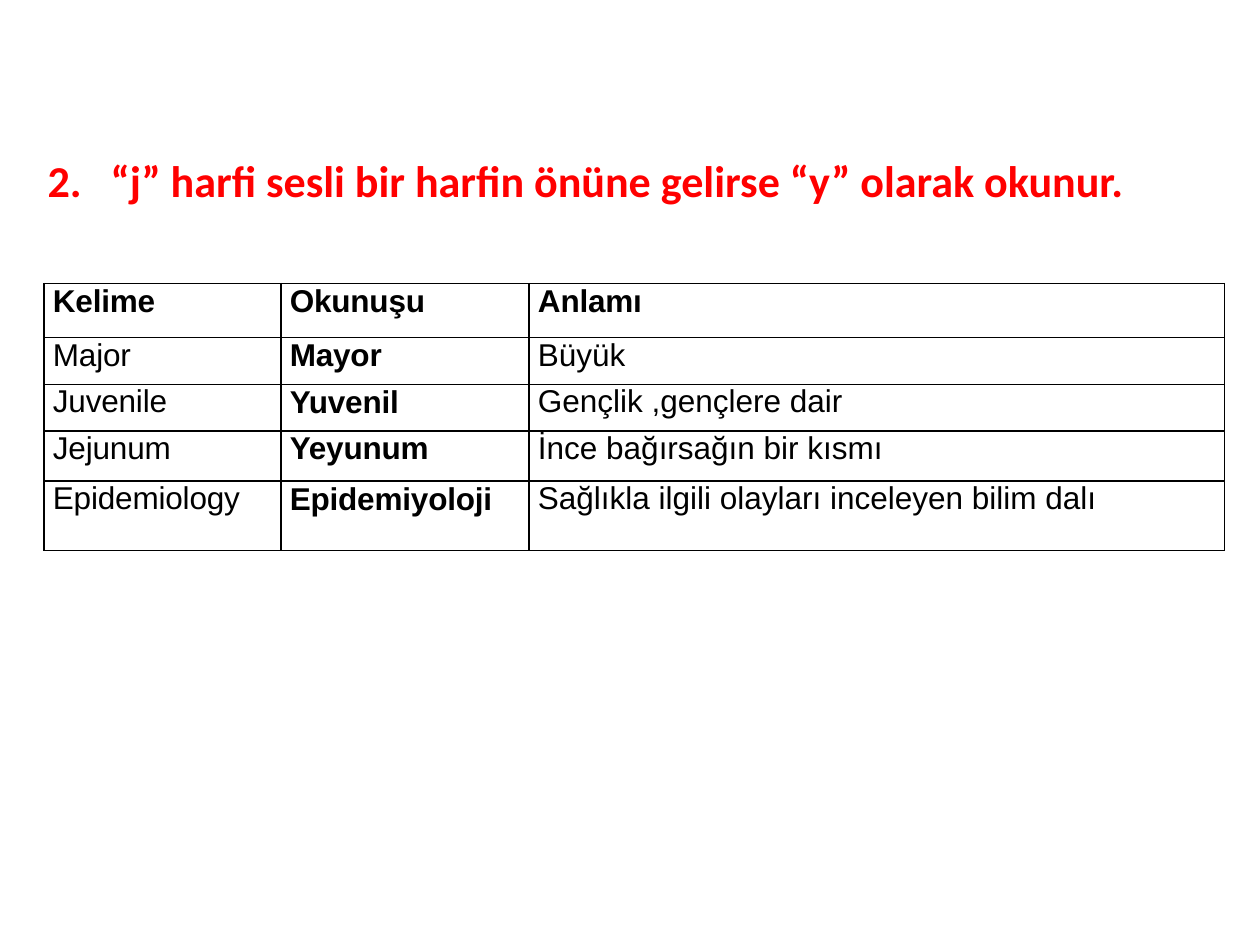
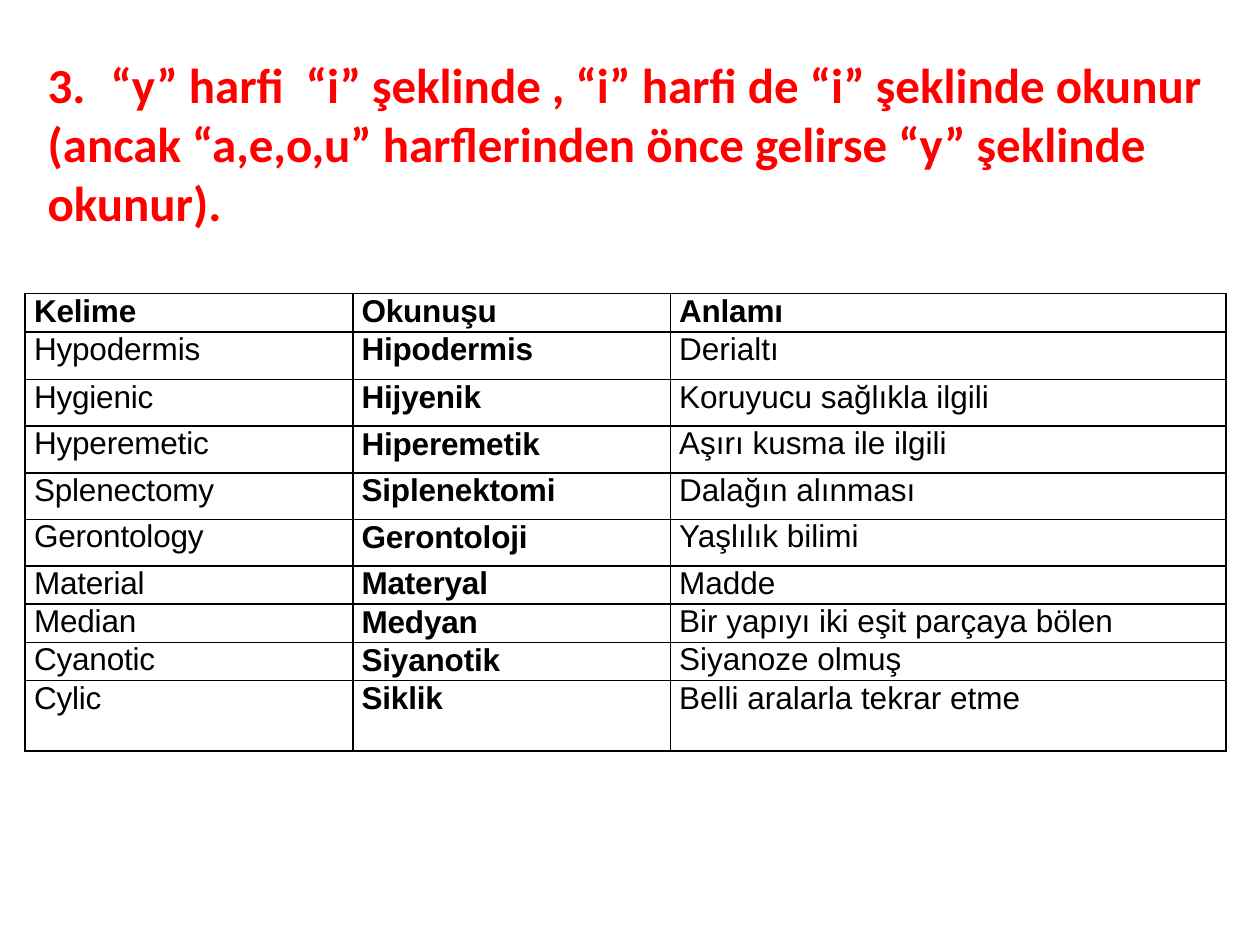
"""Builds two slides on how Latin medical terms are read, each a red rule over a word table."""
from lxml.etree import SubElement as Sub
from pptx import Presentation
from pptx.dml.color import RGBColor as RGB
from pptx.enum.text import MSO_ANCHOR as Anchor
from pptx.oxml.ns import qn
from pptx.util import Inches as In, Pt

RED, BLACK = "FF0000", "000000"
HEAD = ("Kelime", "Okunuşu", "Anlamı")
PAD = 0.07

RULES = [
    dict(
        text="2.\t“j” harfi sesli bir harfin önüne gelirse “y” olarak okunur.",
        size=25.2, box=(0.28, 0.92, 9.45, 1.02), foot=0,
        at=(0.35, 2.25), cols=(1.88, 1.97, 5.52),
        rows=(0.43, 0.37, 0.37, 0.4, 0.55),
        words=[
            ("Major", "Mayor", "Büyük"),
            ("Juvenile", "Yuvenil", "Gençlik ,gençlere dair"),
            ("Jejunum", "Yeyunum", "İnce bağırsağın bir kısmı"),
            ("Epidemiology", "Epidemiyoloji",
             "Sağlıkla ilgili olayları inceleyen bilim dalı"),
        ],
    ),
    dict(
        text="3.\t“y” harfi  “i” şeklinde , “i” harfi de “i” şeklinde okunur "
             "(ancak “a,e,o,u” harflerinden önce gelirse “y” şeklinde okunur).",
        size=28, box=(0.28, 0.44, 9.37, 1.81), foot=0.42,
        at=(0.2, 2.33), cols=(2.6, 2.52, 4.41),
        rows=(0.28, 0.38, *[0.37] * 4, 0.28, 0.3, 0.28, 0.56),
        words=[
            ("Hypodermis", "Hipodermis", "Derialtı"),
            ("Hygienic", "Hijyenik", "Koruyucu sağlıkla ilgili"),
            ("Hyperemetic", "Hiperemetik", "Aşırı kusma ile ilgili"),
            ("Splenectomy", "Siplenektomi", "Dalağın alınması"),
            ("Gerontology", "Gerontoloji", "Yaşlılık bilimi"),
            ("Material", "Materyal", "Madde"),
            ("Median", "Medyan", "Bir yapıyı iki eşit parçaya bölen"),
            ("Cyanotic", "Siyanotik", "Siyanoze olmuş"),
            ("Cylic", "Siklik", "Belli aralarla tekrar etme"),
        ],
    ),
]


def write(frame, text, font="Arial", size=18, color=BLACK, bold=False, space=0, line=1.0):
    par = frame.paragraphs[0]
    par.line_spacing = line
    run = par.add_run()
    run.text = text
    run.font.name, run.font.size, run.font.bold = font, Pt(size), bold
    run.font.color.rgb = RGB.from_string(color)
    run.font._element.set("spc", str(space))
    return par._p.get_or_add_pPr()


def edge(cell, color=BLACK, width=1):
    props = cell._tc.get_or_add_tcPr()
    for side in ("lnL", "lnR", "lnT", "lnB"):
        rim = Sub(props, qn(f"a:{side}"), w=str(Pt(width)))
        Sub(Sub(rim, qn("a:solidFill")), qn("a:srgbClr"), val=color)
    cell.fill.background()


deck = Presentation()
deck.slide_width, deck.slide_height = In(10), In(7.5)

for rule in RULES:
    slide = deck.slides.add_slide(deck.slide_layouts[6])

    frame = slide.shapes.add_textbox(*map(In, rule["box"])).text_frame
    frame.word_wrap = True
    frame.vertical_anchor = Anchor.MIDDLE
    frame.margin_top = frame.margin_right = 0
    frame.margin_bottom = In(rule["foot"])
    props = write(frame, rule["text"], font="Calibri", size=rule["size"], color=RED, bold=True)
    Sub(Sub(props, qn("a:tabLst")), qn("a:tab"), pos=str(In(0.5)), algn="l")

    cols, rows = rule["cols"], rule["rows"]
    size = sum(cols), sum(rows)
    grid = slide.shapes.add_table(len(rows), len(cols), *map(In, rule["at"] + size)).table
    grid.first_row = grid.horz_banding = False
    for col, width in zip(grid.columns, cols):
        col.width = In(width)
    for row, height in zip(grid.rows, rows):
        row.height = In(height)

    for r, words in enumerate([HEAD, *rule["words"]]):
        for c, word in enumerate(words):
            cell = grid.cell(r, c)
            cell.margin_left = cell.margin_right = cell.margin_top = cell.margin_bottom = 0
            bold = r == 0 or c == 1
            props = write(cell.text_frame, word, bold=bold,
                          space=0 if r and c == 2 else -10, line=1.01 if bold else 1.0)
            props.set("marL", str(In(PAD)))
            edge(cell)

deck.save("out.pptx")
